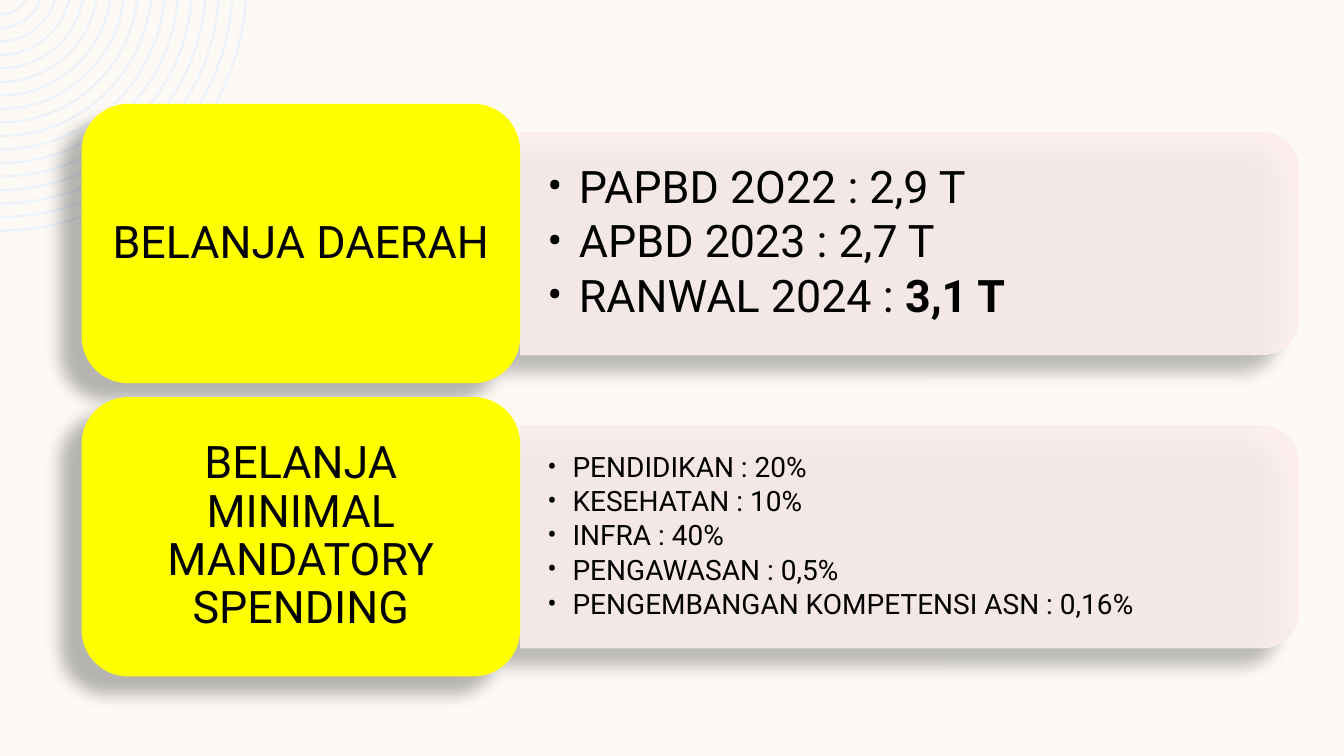
import math

import pptx
import pptx.dml.color
import pptx.enum.shapes
import pptx.enum.text
import pptx.oxml.ns
import pptx.util
from lxml import etree

Pt = pptx.util.Pt
Shape = pptx.enum.shapes.MSO_SHAPE
Align = pptx.enum.text.PP_ALIGN
Anchor = pptx.enum.text.MSO_ANCHOR
qn = pptx.oxml.ns.qn

FONT = "Roboto"
COLORS = {
    "back": "FDFAF6",
    "rings": "EEF3FA",
    "label": "FFFF00",
    "panel": "FBEDED",
    "text": "000000",
    "shadow": "000000",
}
ROWS = [
    ("BELANJA DAERAH", 32, 22.5, [
        [("PAPBD 2O22 : 2,9 T", False)],
        [("APBD 2023 : 2,7 T", False)],
        [("RANWAL 2024 : ", False), ("3,1 T", True)],
    ]),
    ("BELANJA MINIMAL MANDATORY SPENDING", 20, 18, [
        [("PENDIDIKAN : 20%", False)],
        [("KESEHATAN : 10%", False)],
        [("INFRA : 40%", False)],
        [("PENGAWASAN : 0,5%", False)],
        [("PENGEMBANGAN KOMPETENSI ASN : 0,16%", False)],
    ]),
]


def color(name):
    return pptx.dml.color.RGBColor.from_string(COLORS[name])


def paint(shape, name):
    shape.shadow.inherit = False
    shape.fill.solid()
    shape.fill.fore_color.rgb = color(name)
    shape.line.fill.background()


def cast(shape):
    """Give the shape a soft shadow to the lower left."""
    effects = shape._element.spPr.find(qn("a:effectLst"))
    outer = etree.SubElement(
        effects, qn("a:outerShdw"), blurRad=str(Pt(11.8)), dist=str(Pt(19.7)),
        dir=str(141 * 60000), algn="ctr", rotWithShape="0")
    tone = etree.SubElement(outer, qn("a:srgbClr"), val=COLORS["shadow"])
    etree.SubElement(tone, qn("a:alpha"), val="28000")


def setup(frame, side, top):
    frame.word_wrap = True
    frame.vertical_anchor = Anchor.MIDDLE
    frame.margin_left = frame.margin_right = Pt(side)
    frame.margin_top = frame.margin_bottom = Pt(top)


def write(para, text, size, bold=False):
    run = para.add_run()
    run.text = text
    run.font.name = FONT
    run.font.size = Pt(size)
    run.font.bold = bold
    run.font.color.rgb = color("text")


def bend(lines):
    """Turn three line segments into one Bezier curve."""
    curve = etree.Element(qn("a:cubicBezTo"))
    lines[0].addprevious(curve)
    for line in lines:
        curve.append(line[0])
        line.getparent().remove(line)


def rings(slide, left, top, radius, count=17, step=9.65, thick=1.75):
    """Draw the parts of concentric rings that lie below the top edge."""
    def arc(size):
        """Give the ends and handles of an arc in hundredths of a point."""
        start = math.asin(-top / size)
        reach = 4 / 3 * math.tan((math.pi / 2 - start) / 4)
        cos, sin = math.cos(start), math.sin(start)
        units = [(cos, sin), (cos - reach * sin, sin + reach * cos),
                 (reach, 1), (0, 1)]
        return [(round(100 * (left + size * x)), round(100 * (top + size * y)))
                for x, y in units]

    build = None
    for i in range(count):
        outer = radius - i * step
        points = arc(outer) + arc(outer - thick)[::-1]
        if build is None:
            build = slide.shapes.build_freeform(*points[0], scale=Pt(1) / 100)
        else:
            build.move_to(*points[0])
        build.add_line_segments(points[1:], close=True)
    shape = build.convert_to_shape()
    lines = list(shape._element.iter(qn("a:lnTo")))
    size = len(lines) // count
    for i in range(0, size * count, size):
        bend(lines[i:i + 3])
        bend(lines[i + 4:i + 7])
    paint(shape, "rings")


def panel(slide, left, top, width, height, items, size, indent):
    # The preset rounds its top corners, so a quarter turn rounds the right.
    shift = (width - height) / 2
    card = slide.shapes.add_shape(
        Shape.ROUND_2_SAME_RECTANGLE, Pt(left + shift), Pt(top - shift),
        Pt(height), Pt(width))
    card.rotation = 90
    paint(card, "panel")
    tone = card._element.spPr.find(qn("a:solidFill"))[0]
    etree.SubElement(tone, qn("a:alpha"), val="90000")
    cast(card)

    box = slide.shapes.add_textbox(Pt(left), Pt(top), Pt(width), Pt(height))
    frame = box.text_frame
    setup(frame, 19.5, 10)
    for i, runs in enumerate(items):
        para = frame.paragraphs[0] if i == 0 else frame.add_paragraph()
        para.level = 1
        para.line_spacing = 0.9
        para.space_after = Pt(size * 0.14)
        props = para._p.get_or_add_pPr()
        props.set("marL", str(Pt(indent)))
        props.set("indent", str(-Pt(indent)))
        etree.SubElement(props, qn("a:buFont"), typeface=FONT)
        etree.SubElement(props, qn("a:buChar"), char="•")
        for text, bold in runs:
            write(para, text, size, bold)


def label(slide, left, top, width, height, text):
    card = slide.shapes.add_shape(
        Shape.ROUNDED_RECTANGLE, Pt(left), Pt(top), Pt(width), Pt(height))
    paint(card, "label")
    cast(card)
    setup(card.text_frame, 9.5, 5)
    para = card.text_frame.paragraphs[0]
    para.alignment = Align.CENTER
    para.line_spacing = 0.9
    write(para, text, 32)


def row(slide, left, top, width, height, content):
    name, size, indent, items = content
    wide = 313.2
    tall = height * 0.8
    panel(slide, left + wide, top + (height - tall) / 2, width - wide, tall,
          items, size, indent)
    label(slide, left, top, wide, height, name)


def main():
    deck = pptx.Presentation()
    deck.slide_width = Pt(960)
    deck.slide_height = Pt(540)
    slide = deck.slides.add_slide(deck.slide_layouts[6])
    slide.background.fill.solid()
    slide.background.fill.fore_color.rgb = color("back")
    rings(slide, 0, -11.2, 176.8)
    for i, content in enumerate(ROWS):
        row(slide, 58.3, 74.2 + i * 209.5, 869.8, 199.5, content)
    deck.save("out.pptx")


if __name__ == "__main__":
    main()
